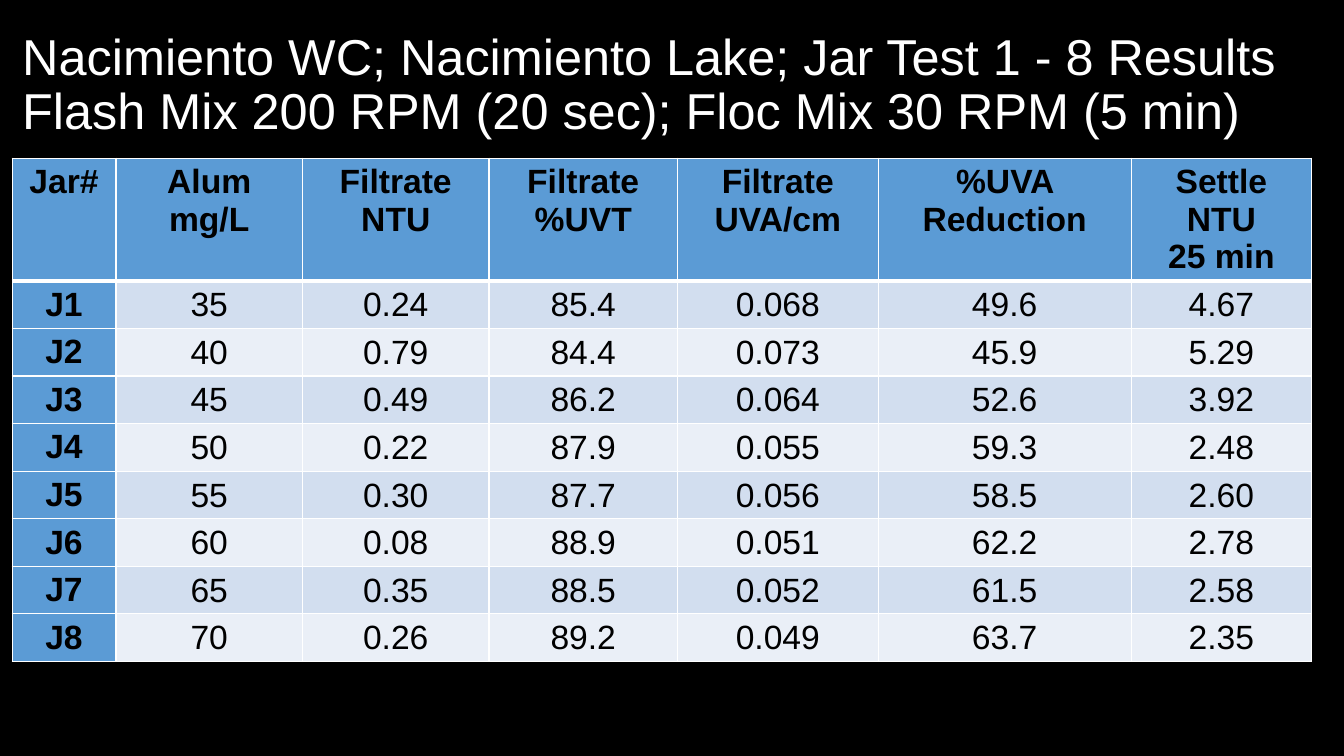
"""Build the jar test results slide."""
from dataclasses import dataclass

from pptx import Presentation
from pptx.dml.color import RGBColor as RGB
from pptx.enum.text import MSO_ANCHOR as Anchor, MSO_AUTO_SIZE as AutoSize, PP_ALIGN as Align
from pptx.oxml.xmlchemy import OxmlElement
from pptx.slide import Slide
from pptx.table import _Cell as Cell
from pptx.text.text import TextFrame
from pptx.util import Inches, Pt


@dataclass(frozen=True)
class Theme:
    font: str = "Arial"
    title_size: int = 36
    cell_size: int = 24
    background: str = "000000"
    title: str = "FFFFFF"
    text: str = "000000"
    border: str = "FFFFFF"
    heading: str = "5B9BD5"
    bands: tuple[str, str] = ("D2DEEF", "EAEFF7")
    thin: int = 1
    thick: int = 3


@dataclass(frozen=True)
class Column:
    heading: str
    width: float
    values: tuple[str, ...]


THEME = Theme()
TITLE = ("Nacimiento WC; Nacimiento Lake; Jar Test 1 - 8 Results\v"
         "Flash Mix 200 RPM (20 sec); Floc Mix 30 RPM (5 min)")
HEADER_HEIGHT, ROW_HEIGHT = 1.21, 0.47
COLUMNS = (
    Column("Jar#", 1.03, tuple(f"J{n}" for n in range(1, 9))),
    Column("Alum\nmg/L", 1.85, tuple(str(dose) for dose in range(35, 71, 5))),
    Column("Filtrate\nNTU", 1.85,
           ("0.24", "0.79", "0.49", "0.22", "0.30", "0.08", "0.35", "0.26")),
    Column("Filtrate\n%UVT", 1.87,
           ("85.4", "84.4", "86.2", "87.9", "87.7", "88.9", "88.5", "89.2")),
    Column("Filtrate\nUVA/cm", 1.99,
           ("0.068", "0.073", "0.064", "0.055", "0.056", "0.051", "0.052", "0.049")),
    Column("%UVA Reduction", 2.51,
           ("49.6", "45.9", "52.6", "59.3", "58.5", "62.2", "61.5", "63.7")),
    Column("Settle\nNTU\n25 min", 1.79,
           ("4.67", "5.29", "3.92", "2.48", "2.60", "2.78", "2.58", "2.35")),
)


def format_text(tf: TextFrame, size: int, color: str, align: Align, bold: bool = False) -> None:
    for p in tf.paragraphs:
        p.alignment = align
        for r in p.runs:
            r.font.name = THEME.font
            r.font.size = Pt(size)
            r.font.bold = bold
            r.font.color.rgb = RGB.from_string(color)


def add_borders(cell: Cell, row: int) -> None:
    tc_pr = cell._tc.get_or_add_tcPr()
    thick_side = {0: "B", 1: "T"}.get(row)
    for side in "LRTB":
        ln = OxmlElement(f"a:ln{side}")
        ln.set("w", str(Pt(THEME.thick if side == thick_side else THEME.thin)))
        fill = OxmlElement("a:solidFill")
        color = OxmlElement("a:srgbClr")
        color.set("val", THEME.border)
        fill.append(color)
        ln.append(fill)
        tc_pr.append(ln)


def fill_cell(cell: Cell, text: str, row: int, col: int) -> None:
    is_heading = row == 0 or col == 0
    cell.text_frame.text = text
    format_text(cell.text_frame, THEME.cell_size, THEME.text, Align.CENTER, is_heading)
    if not is_heading:
        cell.vertical_anchor = Anchor.MIDDLE
        cell.margin_left = cell.margin_right = cell.margin_top = Inches(0.01)
        cell.margin_bottom = Inches(0)
    add_borders(cell, row)
    cell.fill.solid()
    color = THEME.heading if is_heading else THEME.bands[(row - 1) % 2]
    cell.fill.fore_color.rgb = RGB.from_string(color)


def add_title(slide: Slide) -> None:
    sp = slide.shapes.title
    sp.left, sp.top = Inches(0.12), Inches(0.13)
    sp.width, sp.height = Inches(13.03), Inches(1.45)
    tf = sp.text_frame
    tf.text = TITLE
    tf.word_wrap = True
    tf.auto_size = AutoSize.NONE
    tf.vertical_anchor = Anchor.MIDDLE
    tf.paragraphs[0].line_spacing = 0.9
    format_text(tf, THEME.title_size, THEME.title, Align.LEFT)


def add_results(slide: Slide) -> None:
    jar_count = len(COLUMNS[0].values)
    width = sum(column.width for column in COLUMNS)
    height = HEADER_HEIGHT + jar_count * ROW_HEIGHT
    table = slide.shapes.add_table(jar_count + 1, len(COLUMNS), Inches(0.12), Inches(1.57),
                                   Inches(width), Inches(height)).table
    table.first_col = True
    for i, row in enumerate(table.rows):
        row.height = Inches(ROW_HEIGHT if i else HEADER_HEIGHT)
    for col, column in enumerate(COLUMNS):
        table.columns[col].width = Inches(column.width)
        for row, text in enumerate((column.heading, *column.values)):
            fill_cell(table.cell(row, col), text, row, col)


def main() -> None:
    prs = Presentation()
    prs.slide_width, prs.slide_height = Inches(13.33), Inches(7.5)
    slide = prs.slides.add_slide(prs.slide_layouts.get_by_name("Title Only"))
    slide.background.fill.solid()
    slide.background.fill.fore_color.rgb = RGB.from_string(THEME.background)
    add_title(slide)
    add_results(slide)
    prs.save("out.pptx")


if __name__ == "__main__":
    main()
